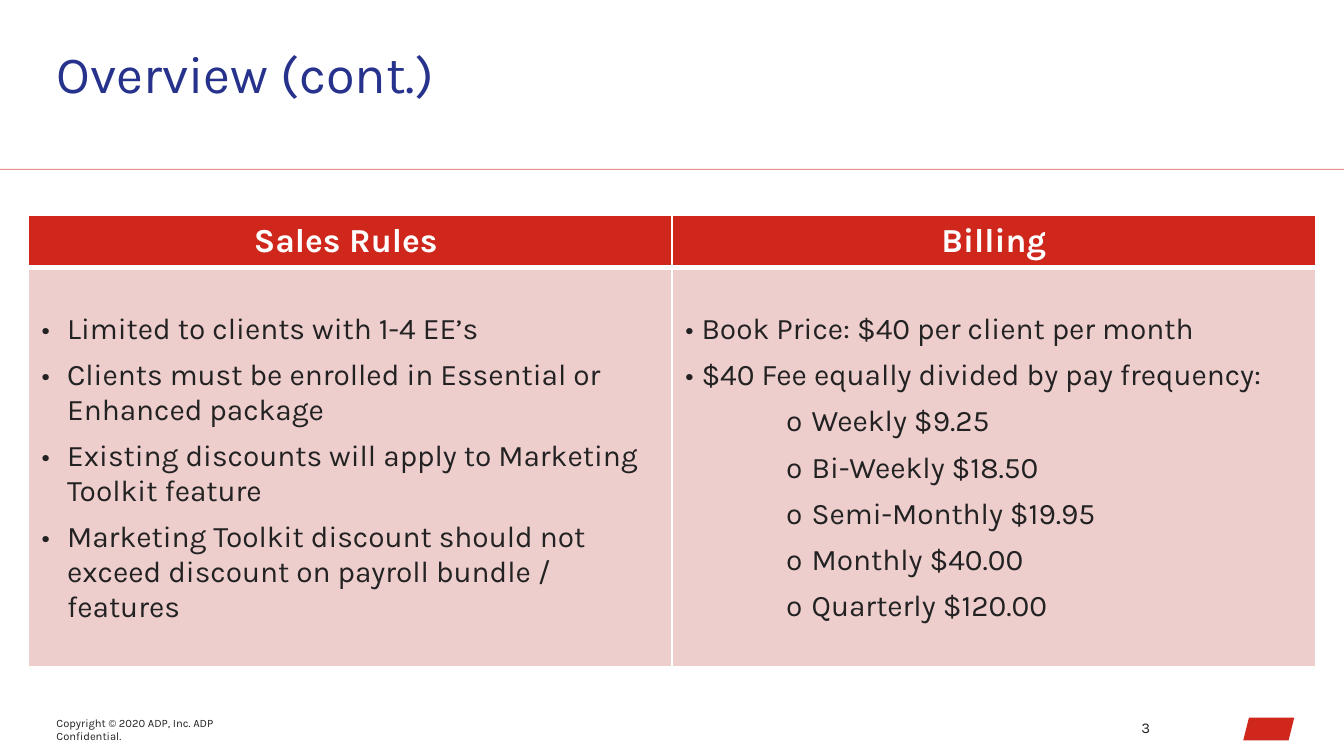
from lxml import etree
from pptx import Presentation
from pptx.dml.color import RGBColor
from pptx.enum.shapes import MSO_CONNECTOR, MSO_SHAPE
from pptx.enum.text import MSO_ANCHOR, PP_ALIGN
from pptx.oxml.ns import qn
from pptx.util import Inches, Pt

STRAIGHT, PARALLELOGRAM = MSO_CONNECTOR.STRAIGHT, MSO_SHAPE.PARALLELOGRAM
TOP, MIDDLE = MSO_ANCHOR.TOP, MSO_ANCHOR.MIDDLE
LEFT, CENTER = PP_ALIGN.LEFT, PP_ALIGN.CENTER

FONT = "Karla"
RED, PINK, NAVY, INK, WHITE = "D0271D", "EECDCD", "26328C", "222222", "FFFFFF"

TITLE = "Overview (cont.)"
COPYRIGHT = "Copyright © 2020 ADP, Inc. ADP Confidential."
PAGE_NUMBER = "3"

# Bullet kinds: character, list level, left margin, hanging indent (inches)
WIDE = ("•", 0, 0.19, 0.19)
TIGHT = ("•", 0, 0.12, 0.12)
SUB = ("o", 2, 0.94, 0.19)

COLUMNS = [
    ("Sales Rules ", [
        (WIDE, "Limited to clients with 1-4 EE’s"),
        (WIDE, "Clients must be enrolled in Essential or Enhanced package"),
        (WIDE, "Existing discounts will apply to Marketing Toolkit feature"),
        (WIDE, "Marketing Toolkit discount should not exceed discount on "
               "payroll bundle / features"),
    ]),
    ("Billing", [
        (TIGHT, "Book Price: $40 per client per month"),
        (TIGHT, "$40 Fee equally divided by pay frequency:"),
        (SUB, "Weekly $9.25"),
        (SUB, "Bi-Weekly $18.50"),
        (SUB, "Semi-Monthly $19.95"),
        (SUB, "Monthly $40.00"),
        (SUB, "Quarterly $120.00"),
    ]),
]

WIDTH = 10
HEIGHT = WIDTH * 9 / 16
SIDE, TABLE_TOP = 0.21, 1.6
TABLE_WIDTH = WIDTH - 2 * SIDE
ROW_HEIGHTS = (0.39, 2.97)
HEADER_BORDERS = {"L": 1, "R": 1, "T": 1, "B": 3}
BODY_BORDERS = {"L": 1, "R": 1, "T": 3, "B": 1}


def rgb(color):
    return RGBColor.from_string(color)


def inches(*lengths):
    return [Inches(length) for length in lengths]


def write(paragraph, text, size, color, align=LEFT, bold=False):
    paragraph.text = text
    paragraph.alignment = align
    for run in paragraph.runs:
        run.font.name, run.font.size, run.font.bold = FONT, Pt(size), bold
        run.font.color.rgb = rgb(color)


def clear_margins(frame, anchor):
    frame.margin_left = frame.margin_top = 0
    frame.margin_right = frame.margin_bottom = 0
    frame.word_wrap, frame.vertical_anchor = True, anchor


def add_label(slide, box, text, size, align):
    frame = slide.shapes.add_textbox(*inches(*box)).text_frame
    clear_margins(frame, MIDDLE)
    write(frame.paragraphs[0], text, size, INK, align)


def set_bullet(paragraph, bullet):
    char, level, margin, hanging = bullet
    paragraph.level = level
    properties = paragraph._p.get_or_add_pPr()
    properties.set("marL", str(Inches(margin)))
    properties.set("indent", str(-Inches(hanging)))
    etree.SubElement(properties, qn("a:buFont"), typeface=FONT)
    etree.SubElement(properties, qn("a:buChar"), char=char)


def style_cell(cell, fill, borders):
    properties = cell._tc.get_or_add_tcPr()
    for edge, width in borders.items():
        line = etree.SubElement(properties, qn("a:ln" + edge), w=str(Pt(width)))
        solid = etree.SubElement(line, qn("a:solidFill"))
        etree.SubElement(solid, qn("a:srgbClr"), val=WHITE)
    cell.fill.solid()
    cell.fill.fore_color.rgb = rgb(fill)


def add_divider(slide, y):
    divider = slide.shapes.add_connector(STRAIGHT, *inches(0, y, WIDTH, y))
    divider.line.width = Pt(0.5)
    divider.line.color.rgb = rgb(RED)
    color = divider.line._ln.find(".//" + qn("a:srgbClr"))
    etree.SubElement(color, qn("a:alpha"), val="50000")
    etree.SubElement(divider._element.spPr, qn("a:effectLst"))


def add_logo_block(slide):
    block = slide.shapes.add_shape(PARALLELOGRAM, *inches(9.25, 5.34, 0.38, 0.17))
    block.shadow.inherit = False
    block.fill.solid()
    block.fill.fore_color.rgb = rgb(RED)
    block.line.fill.background()


def add_rules_table(slide):
    table = slide.shapes.add_table(
        len(ROW_HEIGHTS), len(COLUMNS),
        *inches(SIDE, TABLE_TOP, TABLE_WIDTH, sum(ROW_HEIGHTS))).table
    for row, height in zip(table.rows, ROW_HEIGHTS):
        row.height = Inches(height)
    for index, (heading, items) in enumerate(COLUMNS):
        table.columns[index].width = Inches(TABLE_WIDTH / len(COLUMNS))
        header, body = table.cell(0, index), table.cell(1, index)

        style_cell(header, RED, HEADER_BORDERS)
        header.vertical_anchor = MIDDLE
        write(header.text_frame.paragraphs[0], heading, 18, WHITE, CENTER, True)

        style_cell(body, PINK, BODY_BORDERS)
        body.margin_top = Inches(0.33)
        frame = body.text_frame
        for position, (bullet, text) in enumerate(items):
            paragraph = frame.add_paragraph() if position else frame.paragraphs[0]
            set_bullet(paragraph, bullet)
            write(paragraph, text, 16, INK)
            if position:
                paragraph.space_before = Pt(6)


def main():
    presentation = Presentation()
    presentation.slide_width, presentation.slide_height = inches(WIDTH, HEIGHT)
    slide = presentation.slides.add_slide(presentation.slide_layouts[5])

    title = slide.shapes.title
    title.left, title.top, title.width, title.height = inches(0.42, 0.31, 8.2, 0.47)
    clear_margins(title.text_frame, TOP)
    write(title.text_frame.paragraphs[0], TITLE, 28, NAVY)

    add_divider(slide, 1.26)
    add_rules_table(slide)
    add_label(slide, (0.42, 5.38, 1.61, 0.1), COPYRIGHT, 6, LEFT)
    add_label(slide, (8.46, 5.35, 0.13, 0.13), PAGE_NUMBER, 8, CENTER)
    add_logo_block(slide)
    presentation.save("out.pptx")


if __name__ == "__main__":
    main()
